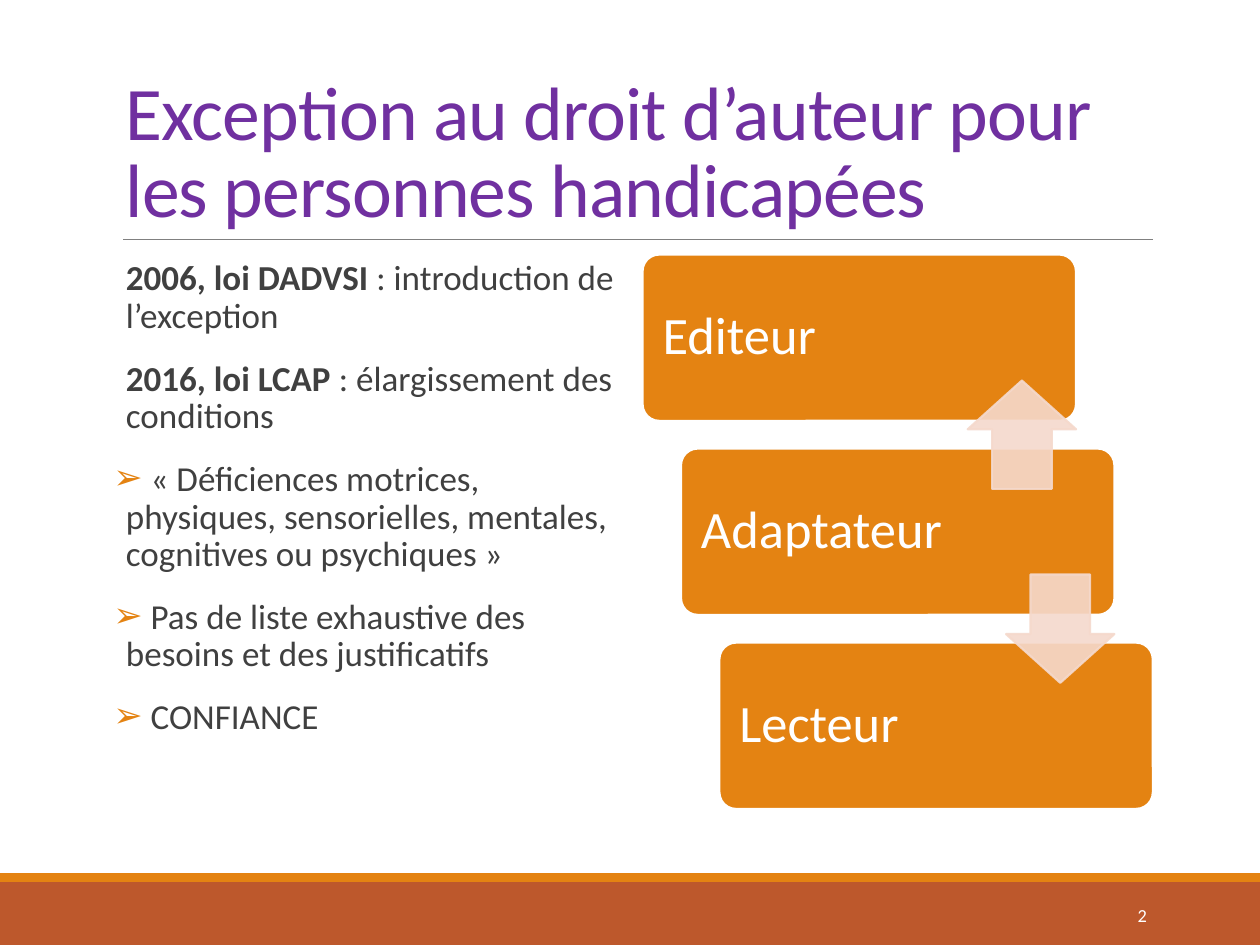
from dataclasses import dataclass

from lxml import etree
from pptx import Presentation
from pptx import util as u
from pptx.dml.color import RGBColor
from pptx.enum import shapes, text
from pptx.oxml import ns


@dataclass(frozen=True)
class Theme:
    font: str = "Calibri"
    orange: str = "E48312"
    rust: str = "BD582C"
    peach: str = "F5D9CC"
    purple: str = "7030A0"
    ink: str = "404040"
    grey: str = "808080"
    white: str = "FFFFFF"
    title: float = 43.2
    body: float = 20
    card: float = 30
    number: float = 10.5


def add_xml(parent, tag, **values):
    child = etree.SubElement(parent, ns.qn(tag))
    for name, value in values.items():
        child.set(name, str(value))
    return child


def assign(target, values):
    for name, value in values.items():
        setattr(target, name, value)


class SlideBuilder:
    COLUMNS, ROWS = 100, 75

    def __init__(self, deck, theme):
        self.theme = theme
        self.slide = deck.slides.add_slide(deck.slide_layouts[6])
        self.column = deck.slide_width / self.COLUMNS
        self.row = deck.slide_height / self.ROWS

    def place(self, left, top, width, height):
        return (round(left * self.column), round(top * self.row),
                round(width * self.column), round(height * self.row))

    def shape(self, kind, at, fill, line=None, adjust=(), alpha=None, turn=0):
        shape = self.slide.shapes.add_shape(kind, *self.place(*at))
        shape.shadow.inherit = False
        shape.rotation = turn
        for index, value in enumerate(adjust):
            shape.adjustments[index] = value
        shape.fill.solid()
        shape.fill.fore_color.rgb = RGBColor.from_string(fill)
        if line:
            shape.line.color.rgb = RGBColor.from_string(line)
            shape.line.width = u.Pt(1.25)
        else:
            shape.line.fill.background()
        if alpha:
            for color in shape._element.spPr.iter(ns.qn("a:srgbClr")):
                add_xml(color, "a:alpha", val=alpha * 1000)
        return shape

    def rule(self, left, right, row):
        start_x, y, width, _ = self.place(left, row, right - left, 0)
        line = self.slide.shapes.add_connector(
            shapes.MSO_CONNECTOR.STRAIGHT, start_x, y, start_x + width, y)
        line.line.color.rgb = RGBColor.from_string(self.theme.grey)
        line.line.width = u.Pt(0.5)
        add_xml(line._element.spPr, "a:effectLst")

    def frame(self, box, anchor, side=0.1, edge=0.05):
        assign(box.text_frame, {
            "word_wrap": True, "vertical_anchor": anchor,
            "margin_left": u.Inches(side), "margin_right": u.Inches(side),
            "margin_top": u.Inches(edge), "margin_bottom": u.Inches(edge)})
        return box.text_frame

    def add_span(self, para, words, size, color, bold=False, tracking=None, **layout):
        assign(para, {"alignment": text.PP_ALIGN.LEFT, **layout})
        span = para.add_run()
        span.text = words
        assign(span.font, {"name": self.theme.font, "size": u.Pt(size), "bold": bold})
        span.font.color.rgb = RGBColor.from_string(color)
        if tracking:
            span._r.get_or_add_rPr().set("spc", str(tracking))

    def label(self, at, words, size, color, anchor, **style):
        box = self.slide.shapes.add_textbox(*self.place(*at))
        frame = self.frame(box, anchor)
        self.add_span(frame.paragraphs[0], words, size, color, **style)

    def card(self, at, words):
        box = self.shape(shapes.MSO_SHAPE.ROUNDED_RECTANGLE, at, self.theme.orange,
                         self.theme.white, (0.1,))
        frame = self.frame(box, text.MSO_ANCHOR.MIDDLE, 0.12, 0.12)
        self.add_span(frame.paragraphs[0], words, self.theme.card, self.theme.white,
                      line_spacing=0.9)

    def arrow(self, at, turn):
        self.shape(shapes.MSO_SHAPE.DOWN_ARROW, at, self.theme.peach,
                   self.theme.peach, (0.55, 0.45), 90, turn)

    def bullets(self, at, items):
        box = self.slide.shapes.add_textbox(*self.place(*at))
        frame = self.frame(box, text.MSO_ANCHOR.TOP, 0)
        layout = {"line_spacing": 0.9, "space_before": u.Pt(12), "space_after": u.Pt(2)}
        for index, (mark, lead, words) in enumerate(items):
            para = frame.add_paragraph() if index else frame.paragraphs[0]
            for part, bold in ((lead, True), (words, False)):
                if part:
                    self.add_span(para, part, self.theme.body, self.theme.ink, bold, **layout)
            props = para._p.get_or_add_pPr()
            props.set("marL", str(u.Inches(0.1)))
            props.set("indent", str(u.Inches(-0.1)))
            add_xml(add_xml(props, "a:buClr"), "a:srgbClr", val=self.theme.orange)
            add_xml(props, "a:buFont", typeface=self.theme.font)
            add_xml(props, "a:buChar", char=mark)


def main():
    deck = Presentation()
    deck.slide_width, deck.slide_height = u.Inches(10), u.Inches(7.5)
    theme = Theme()
    page = SlideBuilder(deck, theme)

    page.shape(shapes.MSO_SHAPE.RECTANGLE, (0, 70, 100, 5), theme.rust)
    page.shape(shapes.MSO_SHAPE.RECTANGLE, (0, 69.3, 100, 0.7), theme.orange)
    page.rule(9.8, 91.5, 19)
    page.label((9, 3.1, 82.5, 15.9),
               "Exception au droit d’auteur pour les personnes handicapées",
               theme.title, theme.purple, text.MSO_ANCHOR.BOTTOM,
               tracking=-50, line_spacing=0.85)
    page.bullets((9, 20.2, 41, 48.8), [
        (" ", "2006, loi DADVSI ", ": introduction de l’exception"),
        (" ", "2016, loi LCAP ", ": élargissement des conditions"),
        ("➢", "", " « Déficiences motrices, physiques, sensorielles, mentales, "
                  "cognitives ou psychiques »"),
        ("➢", "", " Pas de liste exhaustive des besoins et des justificatifs"),
        ("➢", "", " CONFIANCE"),
    ])

    step_x, step_y = 3.05, 15.4
    for index, role in enumerate(("Editeur", "Adaptateur", "Lecteur")):
        page.card((51 + index * step_x, 20.2 + index * step_y, 34.4, 13.2), role)
    for index, turn in enumerate((180, 0)):
        page.arrow((76.8 + index * step_x, 30.2 + index * step_y, 8.6, 8.6), turn)

    page.label((81.2, 70.6, 10.8, 4), "2", theme.number, theme.white,
               text.MSO_ANCHOR.MIDDLE, alignment=text.PP_ALIGN.RIGHT)
    deck.save("out.pptx")


if __name__ == "__main__":
    main()
